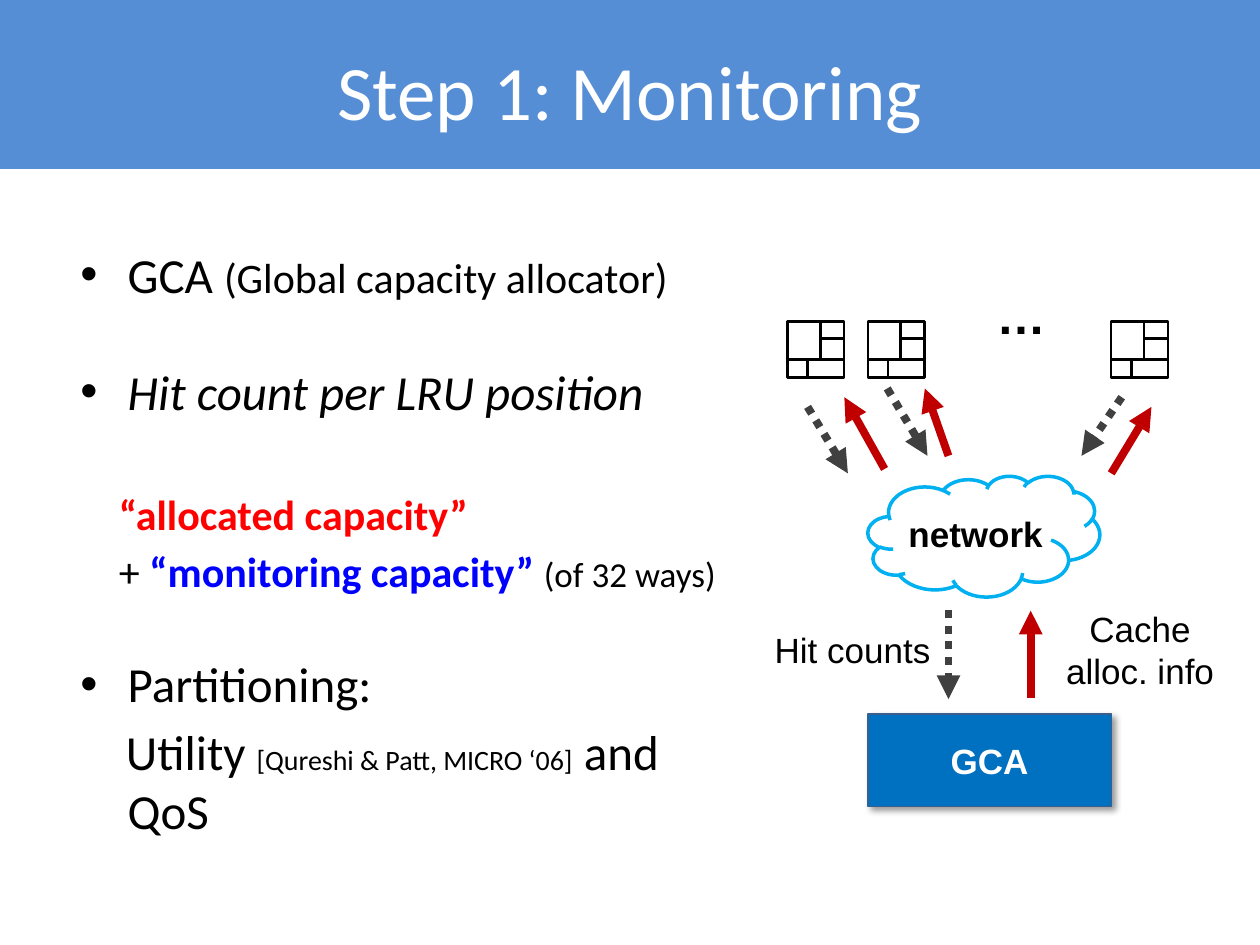
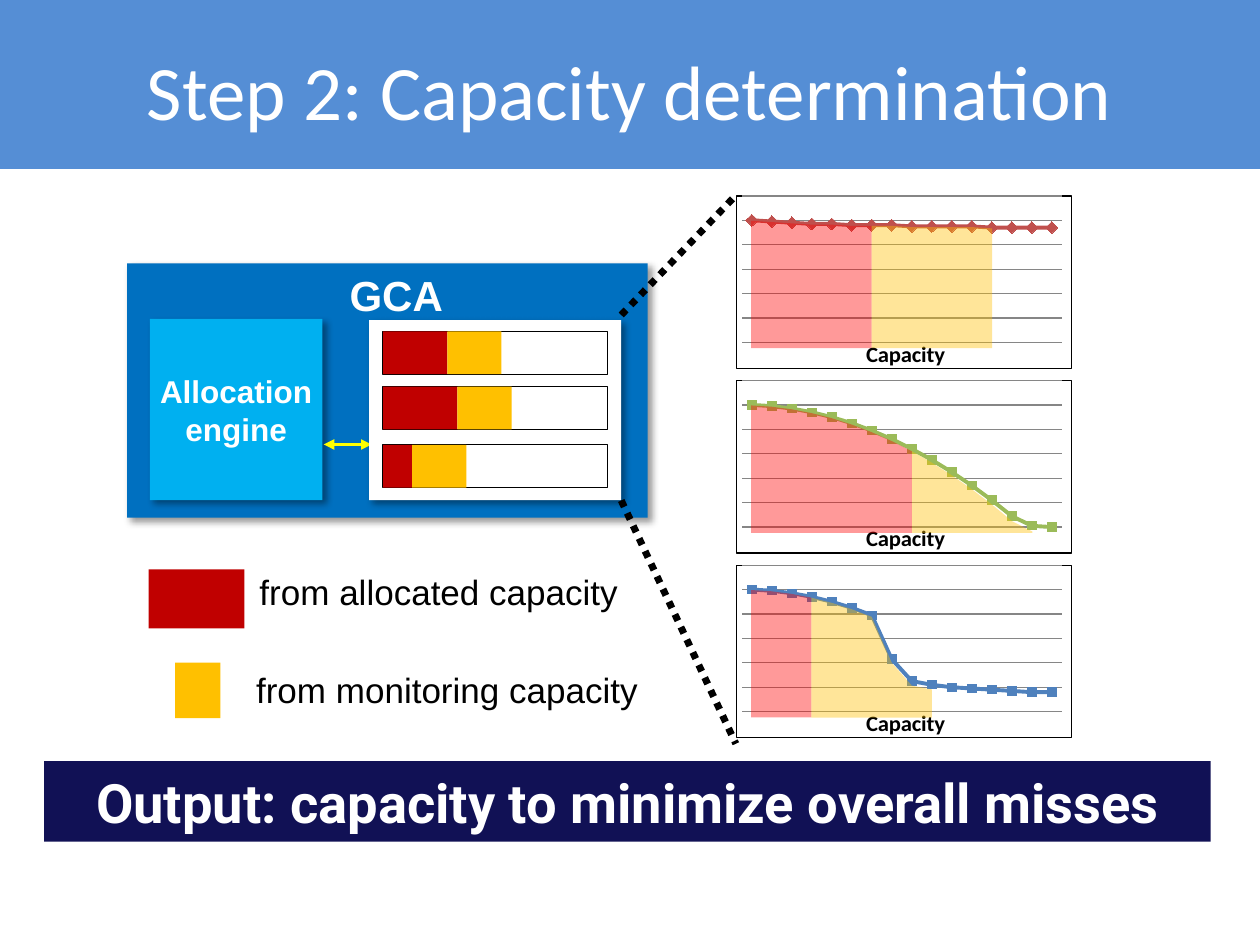
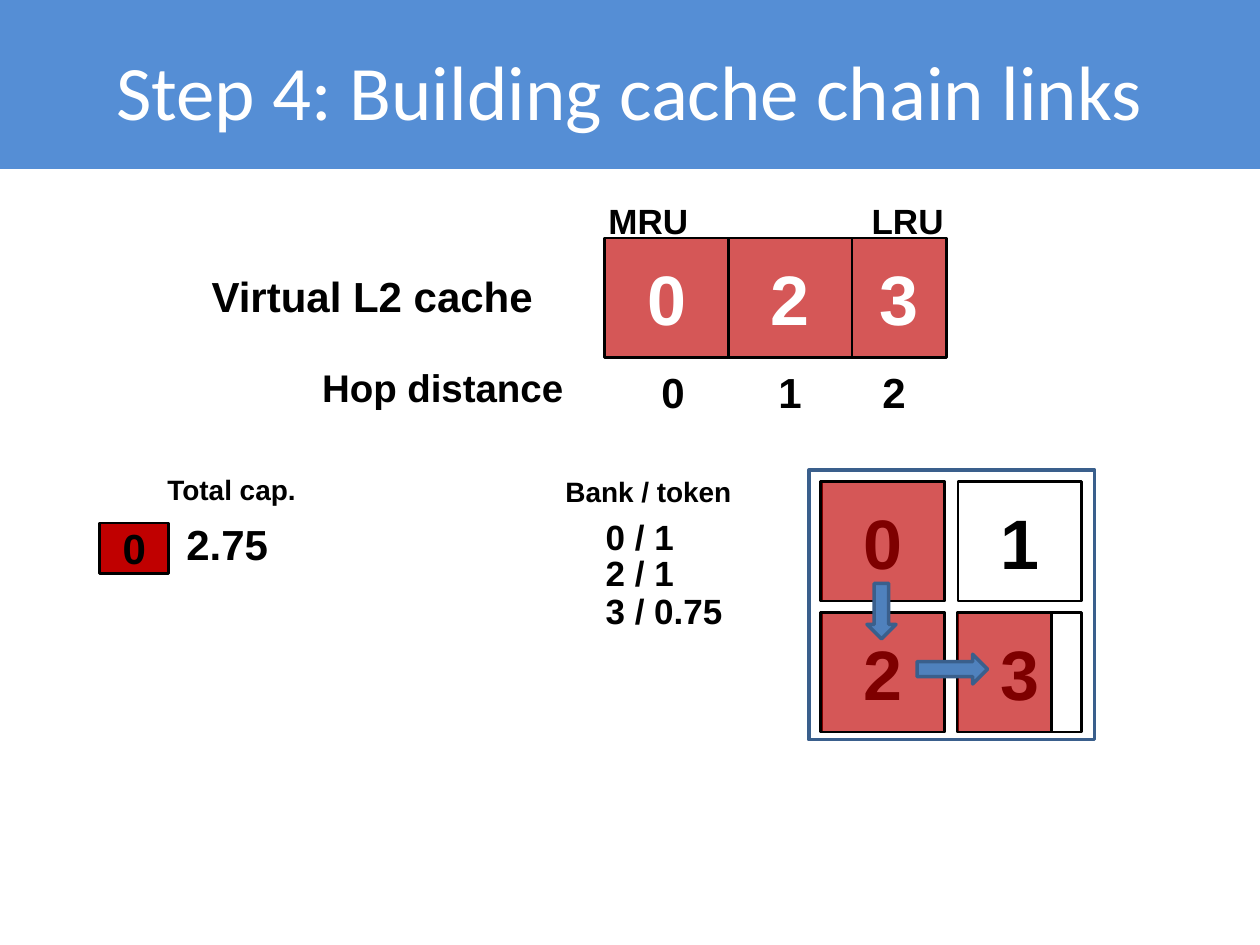
from lxml import etree
from pptx import Presentation
from pptx.chart.data import CategoryChartData
from pptx.dml.color import RGBColor
from pptx.enum.chart import XL_CHART_TYPE, XL_MARKER_STYLE
from pptx.enum.dml import MSO_LINE
from pptx.enum.shapes import MSO_CONNECTOR, MSO_SHAPE
from pptx.enum.text import MSO_ANCHOR, PP_ALIGN
from pptx.oxml import parse_xml
from pptx.oxml.ns import nsdecls, qn
from pptx.util import Pt

RECT, CLOUD, DOWN = MSO_SHAPE.RECTANGLE, MSO_SHAPE.CLOUD, MSO_SHAPE.DOWN_ARROW
STRAIGHT, DOTS = MSO_CONNECTOR.STRAIGHT, MSO_LINE.ROUND_DOT
LEFT, CENTER = PP_ALIGN.LEFT, PP_ALIGN.CENTER
TOP, MIDDLE = MSO_ANCHOR.TOP, MSO_ANCHOR.MIDDLE
DIAMOND, SQUARE = XL_MARKER_STYLE.DIAMOND, XL_MARKER_STYLE.SQUARE

COLORS = {
    "band": "558ED5", "white": "FFFFFF", "black": "000000", "gca": "0070C0",
    "sky": "00B0F0", "dark red": "C00000", "amber": "FFC000", "red": "FF0000",
    "blue": "0000FF", "gray": "404040", "yellow": "FFFF00", "navy": "111155",
    "arrow": "4F81BD", "edge": "3A5F8C", "grid": "868686",
    "chart red": "C0504D", "chart green": "9BBB59", "chart blue": "4F81BD",
}

# ---- Content: step 1 ----
BULLET = dict(margin=27, first=-27, bullet=True)
QUOTE = dict(margin=22, first=0)
BODY = [
    (dict(BULLET, before=0),
     [("GCA ", dict(size=28)), ("(Global capacity allocator)", dict(size=24))]),
    (dict(BULLET, before=33),
     [("Hit count per LRU position", dict(size=28, italic=True))]),
    (dict(QUOTE, before=39),
     [("“allocated capacity”", dict(size=24, bold=True, color="red"))]),
    (dict(QUOTE, before=4),
     [("+ ", dict(size=24)),
      ("“monitoring capacity” ", dict(size=24, bold=True, color="blue")),
      ("(of 32 ways)", dict(size=20))]),
    (dict(BULLET, before=33), [("Partitioning:", dict(size=28))]),
    (dict(margin=27, first=-1, before=5),
     [("Utility ", dict(size=28)),
      ("[Qureshi & Patt, MICRO ‘06]", dict(size=16)),
      (" and QoS", dict(size=28))]),
]
CORE_LEFTS = [450, 496, 635]
CORE_PARTS = [(0, 0, 18.7, 22), (18.7, 0, 13.7, 9.7), (18.7, 9.7, 13.7, 12.3),
              (0, 22, 11.5, 10), (11.5, 22, 20.9, 10)]
HIT_ARROWS = [((461.5, 232.5), (484.5, 270.5)), ((507, 222), (530, 260.5)),
              ((641, 227), (618, 260.5)), ((542, 348.5), (542, 399.5))]
ALLOC_ARROWS = [((635, 270.5), (658, 232.5)), ((542, 260.5), (528.5, 222)),
                ((505.5, 268), (482.5, 227)), ((589, 399), (589, 349))]

# ---- Content: step 2 ----
# top, width from allocated capacity
BARS = [(189.4, 36.7), (221, 42.5), (254.2, 16.6)]
MONITOR_WIDTH = 31
LEGEND = [("from allocated capacity", "dark red", (85, 325.4, 54.7, 33.8),
           (139.5, 322.5, 222.5, 32)),
          ("from monitoring capacity", "amber", (100, 378.7, 26, 31.7),
           (138, 378.7, 235, 32))]
# colour, marker, marker size, last allocated point, last monitored point, hits
CURVES = [
    ("chart red", DIAMOND, 7, 7, 13,
     [100, 99, 98, 97, 97, 96, 96, 96, 95, 95, 95, 95, 94, 94, 94, 94]),
    ("chart green", SQUARE, 5, 9, 15,
     [100, 99, 97, 94, 90, 85, 79, 72, 64, 55, 45, 34, 22, 9, 1, 0]),
    ("chart blue", SQUARE, 5, 4, 10,
     [100, 99, 97, 94, 90, 85, 79, 43, 25, 22, 20, 19, 18, 17, 16, 16]),
]
CHART_LEFT, CHART_TOP, CHART_PITCH = 420.5, 111.6, 105.5
CHART_WIDTH, CHART_HEIGHT = 192.2, 102.8
PLOT = dict(x=0.016, y=0, w=0.955, h=0.85)
HITS_MAX = 120

# ---- Content: step 4 ----
CHAIN = [("0", 345.6, 70.6), ("2", 416.2, 70.6), ("3", 486.8, 54)]
HOPS = [("0", 384.6), ("1", 451.4), ("2", 510.9)]
BANKS = ["0", "1", "2", "3"]
BANK_WIDTH, BANK_HEIGHT = 70.6, 68.4
USED_WIDTHS = {"0": 70.6, "2": 70.6, "3": 54}
LABELS = [
    ("MRU", 20, (340.6, 110.2, 62, 32)), ("LRU", 20, (491, 110.2, 62, 32)),
    ("Virtual L2 cache", 24, (113.8, 151.2, 212.4, 36)),
    ("Hop distance", 22, (177, 204.5, 169, 34)),
    ("2.75", 24, (99.4, 293, 68.4, 36)),
    ("Total cap.", 16, (88.6, 266.4, 90, 26.6)),
    ("Bank / token", 16, (316, 267.8, 112, 26.6)),
    ("0 / 1", 20, (339, 290.9, 68.4, 32)),
    ("2 / 1", 20, (339, 311.8, 68.4, 32)),
    ("3 / 0.75", 20, (339, 333.4, 88, 32)),
]


# ---- Helpers ----
def color_of(name):
    return RGBColor.from_string(COLORS[name])


def points(values):
    return [Pt(value) for value in values]


def style_font(font, size, color="black", face="Arial", bold=False, italic=False):
    font.size, font.name, font.bold, font.italic = Pt(size), face, bold, italic
    font.color.rgb = color_of(color)


def write(box, text, align=CENTER, anchor=MIDDLE, wrap=True, **font):
    frame = box.text_frame
    frame.word_wrap, frame.vertical_anchor = wrap, anchor
    for index, line in enumerate(text.split("\n")):
        para = frame.paragraphs[0] if index == 0 else frame.add_paragraph()
        para.alignment = align
        span = para.add_run()
        span.text = line
        style_font(span.font, **font)


def add_label(page, place, text, align=LEFT, anchor=TOP, **font):
    write(page.shapes.add_textbox(*points(place)), text, align, anchor, **font)


def paint(shape, fill=None, line=None, width=0.75, alpha=None, shadow=False):
    shape.shadow.inherit = False
    if fill:
        shape.fill.solid()
        shape.fill.fore_color.rgb = color_of(fill)
    else:
        shape.fill.background()
    if line:
        shape.line.color.rgb = color_of(line)
        shape.line.width = Pt(width)
    else:
        shape.line.fill.background()
    properties = shape._element.spPr
    if alpha:
        tint = properties.xpath("./a:solidFill/a:srgbClr")[0]
        etree.SubElement(tint, qn("a:alpha"), val=str(alpha * 1000))
    if shadow:
        properties.find(qn("a:effectLst")).append(parse_xml(
            f'<a:outerShdw {nsdecls("a")} blurRad="{Pt(4)}" dist="{Pt(3)}" '
            'dir="2700000" rotWithShape="0"><a:srgbClr val="000000">'
            '<a:alpha val="40000"/></a:srgbClr></a:outerShdw>'))


def add_block(page, place, kind=RECT, **look):
    shape = page.shapes.add_shape(kind, *points(place))
    paint(shape, **look)
    return shape


def add_line(page, start, end, color, width, dash=None, ends=()):
    line = page.shapes.add_connector(STRAIGHT, *points(start + end))
    line.line.color.rgb = color_of(color)
    line.line.width = Pt(width)
    if dash:
        line.line.dash_style = dash
    properties = line._element.spPr
    for end_name in ends:
        etree.SubElement(properties.find(qn("a:ln")), qn(f"a:{end_name}"),
                         type="triangle")
    etree.SubElement(properties, qn("a:effectLst"))


def new_page(deck, title):
    page = deck.slides.add_slide(deck.slide_layouts[6])
    add_block(page, (0, 0, 720, 96.5), fill="band")
    add_label(page, (36, 6.5, 648, 90), title, CENTER, MIDDLE,
              size=44, face="Calibri", color="white")
    return page


def add_body(page, place):
    frame = page.shapes.add_textbox(*points(place)).text_frame
    frame.word_wrap = True
    for index, (layout, spans) in enumerate(BODY):
        para = frame.paragraphs[0] if index == 0 else frame.add_paragraph()
        properties = para._p.get_or_add_pPr()
        properties.set("marL", str(Pt(layout["margin"])))
        properties.set("indent", str(Pt(layout["first"])))
        if layout.get("bullet"):
            etree.SubElement(properties, qn("a:buFont"), typeface="Arial")
            etree.SubElement(properties, qn("a:buChar"), char="•")
        if layout["before"]:
            para.space_before = Pt(layout["before"])
        for text, font in spans:
            span = para.add_run()
            span.text = text
            style_font(span.font, face="Calibri", **font)


def manual_layout(inner=False, **edges):
    target = '<c:layoutTarget val="inner"/>' if inner else ""
    values = "".join(f'<c:{key} val="{value}"/>' for key, value in edges.items())
    return parse_xml(
        f'<c:layout {nsdecls("c")}><c:manualLayout>{target}<c:xMode val="edge"/>'
        f'<c:yMode val="edge"/>{values}</c:manualLayout></c:layout>')


def drop_layout(element):
    for layout in element.findall(qn("c:layout")):
        element.remove(layout)


def add_curve(page, top, color, marker, marker_size, hits):
    data = CategoryChartData()
    data.categories = [str(number + 1) for number in range(len(hits))]
    data.add_series("Series 1", hits)
    chart = page.shapes.add_chart(
        XL_CHART_TYPE.LINE_MARKERS,
        *points((CHART_LEFT, top, CHART_WIDTH, CHART_HEIGHT)), data).chart
    chart.has_legend = chart.has_title = False
    style_font(chart.font, 10, face="Calibri")

    # Axes
    hits_axis, capacity_axis = chart.value_axis, chart.category_axis
    hits_axis.minimum_scale, hits_axis.maximum_scale = 0, HITS_MAX
    hits_axis.major_unit = 20
    hits_axis.has_major_gridlines = True
    hits_axis.major_gridlines.format.line.color.rgb = color_of("grid")
    hits_axis.visible = capacity_axis.visible = False
    title = capacity_axis.axis_title
    span = title.text_frame.paragraphs[0].add_run()
    span.text = "Capacity"
    style_font(span.font, 13, face="Calibri", bold=True)
    drop_layout(title._element)
    title._element.find(qn("c:tx")).addnext(manual_layout(x=0.375, y=0.81))

    # Series
    chart.plots[0].vary_by_categories = False
    series = chart.plots[0].series[0]
    series.smooth = False
    series.format.line.color.rgb = color_of(color)
    series.format.line.width = Pt(2.25)
    series.marker.style, series.marker.size = marker, marker_size
    series.marker.format.fill.solid()
    series.marker.format.fill.fore_color.rgb = color_of(color)
    series.marker.format.line.color.rgb = color_of(color)

    # Plot place and chart border
    space = chart._chartSpace
    plot_area = space.find(".//" + qn("c:plotArea"))
    drop_layout(plot_area)
    plot_area.insert(0, manual_layout(inner=True, **PLOT))
    space.find(qn("c:chart")).addnext(parse_xml(
        f'<c:spPr {nsdecls("c", "a")}><a:solidFill><a:srgbClr val="FFFFFF"/>'
        f'</a:solidFill><a:ln w="{Pt(0.75)}"><a:solidFill>'
        '<a:srgbClr val="000000"/></a:solidFill></a:ln></c:spPr>'))


def add_area(page, top, hits, first, last, color):
    """Shade the surface under a curve from one point to another."""
    step = CHART_WIDTH * PLOT["w"] / len(hits)
    left = CHART_LEFT + CHART_WIDTH * PLOT["x"]
    height = CHART_HEIGHT * PLOT["h"]
    base = top + height
    curve = [(left + (number - 0.5) * step,
              base - height * hits[number - 1] / HITS_MAX)
             for number in range(first, last + 1)]
    outline = [points(spot) for spot in curve + [(curve[-1][0], base)]]
    builder = page.shapes.build_freeform(*points((curve[0][0], base)))
    builder.add_line_segments(outline, close=True)
    paint(builder.convert_to_shape(), fill=color, alpha=40)


# ---- Slides ----
def monitoring(deck):
    page = new_page(deck, "Step 1: Monitoring")
    add_body(page, (38.9, 136.2, 393, 368))
    for left in CORE_LEFTS:
        for x, y, width, height in CORE_PARTS:
            add_block(page, (left + x, 183.6 + y, width, height),
                      line="black", width=1.5)
    cloud = add_block(page, (496, 272, 132.5, 69), CLOUD, line="sky", width=2)
    write(cloud, "network", wrap=False, size=20, bold=True)
    allocator = add_block(page, (496, 408, 139, 52.8), fill="gca", line="edge",
                          shadow=True)
    write(allocator, "GCA", size=20, bold=True, color="white")
    add_label(page, (435.6, 355.7, 108, 32), "Hit counts", size=20)
    add_label(page, (596, 343.4, 111, 55.5), "Cache\nalloc. info", CENTER, size=20)
    add_label(page, (515.5, 159.8, 136, 60), "…", CENTER, size=28, bold=True)
    for start, end in HIT_ARROWS:
        add_line(page, start, end, "gray", 4.5, DOTS, ["tailEnd"])
    for start, end in ALLOC_ARROWS:
        add_line(page, start, end, "dark red", 4.5, ends=["tailEnd"])


def capacity(deck):
    page = new_page(deck, "Step 2: Capacity determination")
    add_block(page, (72.7, 150.5, 297.4, 145.4), fill="gca", shadow=True)
    for text, color, swatch, place in LEGEND:
        add_block(page, swatch, fill=color)
        add_label(page, place, text, CENTER, size=20)
    engine = add_block(page, (85.7, 182.2, 98.6, 103.7), fill="sky", shadow=True)
    write(engine, "Allocation\nengine", wrap=False, size=18, bold=True, color="white")
    add_line(page, (185, 254), (212.4, 254), "yellow", 2,
             ends=["headEnd", "tailEnd"])
    add_block(page, (211, 182.9, 144, 103), fill="white", shadow=True)
    for top, allocated in BARS:
        add_block(page, (218.9, top, 128.2, 24.5), line="black")
        add_block(page, (218.9, top, allocated, 24.5), fill="dark red")
        add_block(page, (218.9 + allocated, top, MONITOR_WIDTH, 24.5), fill="amber")
    add_label(page, (185, 150.5, 82.8, 30), "GCA", CENTER,
              size=24, bold=True, color="white")
    add_line(page, (355, 180), (420.5, 111.6), "black", 4, DOTS)
    add_line(page, (355, 286), (420.5, 425), "black", 4, DOTS)
    output = add_block(page, (25.2, 434.9, 666.7, 46), fill="navy")
    write(output, "Output: capacity to minimize overall misses",
          size=31, face="Roboto", bold=True, color="white")
    for row, (color, marker, size, allocated, monitored, hits) in enumerate(CURVES):
        top = CHART_TOP + row * CHART_PITCH
        add_curve(page, top, color, marker, size, hits)
        add_area(page, top, hits, 1, allocated, "red")
        add_area(page, top, hits, allocated, monitored, "amber")


def chain_links(deck):
    page = new_page(deck, "Step 4: Building cache chain links")
    used = dict(fill="dark red", line="black", width=1.5, alpha=66)

    # Banks, with the used part laid over each
    add_block(page, (462.2, 268.6, 163.4, 154), line="edge", width=2)
    corners = {bank: (469.5 + index % 2 * 78, 275 + index // 2 * 75)
               for index, bank in enumerate(BANKS)}
    for bank, corner in corners.items():
        tile = add_block(page, (*corner, BANK_WIDTH, BANK_HEIGHT),
                         line="black", width=1.5)
        write(tile, bank, size=40, bold=True)
    for bank, width in USED_WIDTHS.items():
        left, top = corners[bank]
        add_block(page, (left - 0.7, top, width, BANK_HEIGHT), **used)

    # Virtual cache
    for bank, left, width in CHAIN:
        link = add_block(page, (left, 136, width, BANK_HEIGHT), **used)
        write(link, bank, size=40, bold=True, color="white")
    for hop, middle in HOPS:
        add_label(page, (middle - 20, 206, 40, 36), hop, CENTER, size=24, bold=True)
    for text, size, place in LABELS:
        add_label(page, place, text, size=size, bold=True)

    # Links between banks
    arrow = dict(kind=DOWN, fill="arrow", line="edge", width=2)
    add_block(page, (495.4, 333.4, 16.6, 31.7), **arrow)
    add_block(page, (535.7, 362.2, 17, 40.3), **arrow).rotation = 270

    total = add_block(page, (56.9, 298.8, 39.6, 28.8), fill="dark red",
                      line="black", width=1.5)
    write(total, "0", wrap=False, size=24, bold=True)


def main():
    deck = Presentation()
    deck.slide_width, deck.slide_height = Pt(720), Pt(540)
    for build in (monitoring, capacity, chain_links):
        build(deck)
    deck.save("out.pptx")


if __name__ == "__main__":
    main()
